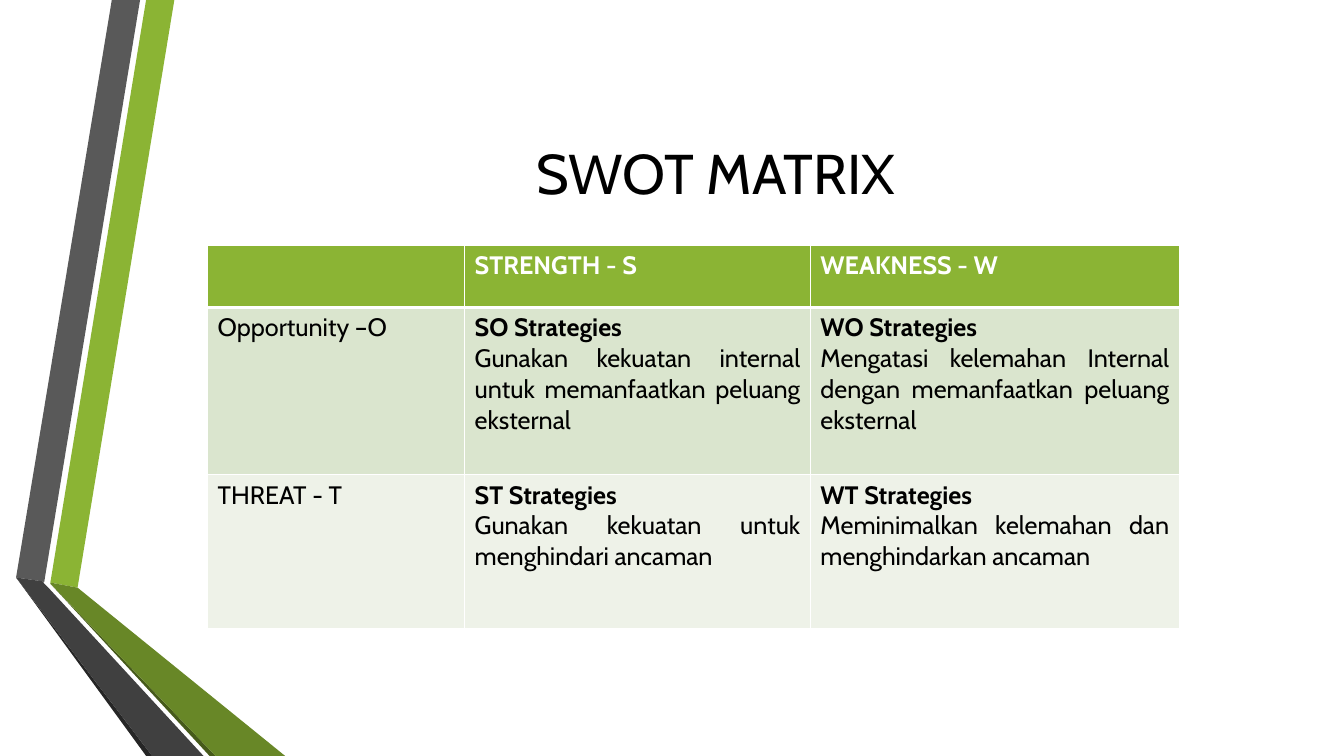
from lxml.etree import SubElement as Sub
from pptx import Presentation
from pptx.dml.color import RGBColor as RGB
from pptx.enum.text import MSO_ANCHOR as Anchor, PP_ALIGN as Align
from pptx.oxml.ns import qn
from pptx.util import Inches, Pt

HUES = {
    "white": "FFFFFF", "black": "000000", "green": "8BB434",
    "olive": "688727", "moss": "465A1A", "grey": "595959",
    "coal": "404040", "soot": "262626", "sage": "DAE5CE", "mist": "EEF2E8",
}
COLS, ROWS = 40, 22.5
BANDS = [
    ("green", [(1.5, 17.34), (2.31, 17.49), (5.19, 0), (4.35, 0)]),
    ("grey", [(4.17, 0), (3.33, 0), (0.48, 17.19), (1.32, 17.31)]),
    ("soot", [(0.48, 17.19), (4.35, ROWS), (4.53, ROWS)]),
    ("moss", [(1.5, 17.37), (6.24, ROWS), (6.42, ROWS)]),
    ("olive", [(1.5, 17.37), (6.42, ROWS), (8.49, ROWS),
               (2.31, 17.49), (1.5, 17.34)]),
    ("coal", [(6.06, ROWS), (1.44, 17.49), (1.29, 17.34),
              (1.32, 17.31), (0.48, 17.19), (4.53, ROWS)]),
]
CELLS = [
    [[], ["STRENGTH - S"], ["WEAKNESS - W"]],
    [["Opportunity –O"],
     ["SO Strategies",
      "Gunakan kekuatan internal untuk memanfaatkan peluang eksternal"],
     ["WO Strategies",
      "Mengatasi kelemahan Internal dengan memanfaatkan peluang eksternal"]],
    [["THREAT - T"],
     ["ST Strategies", "Gunakan kekuatan untuk menghindari ancaman"],
     ["WT Strategies", "Meminimalkan kelemahan dan menghindarkan ancaman"]],
]
FILLS = ["green", "sage", "mist"]
WIDTHS = [7.65, 10.29, 10.98]
HEIGHTS = [1.86, 4.98, 4.59]


class Deck:
    face = "Cabin"
    unit = Inches(1) / 3

    def __init__(self):
        self.show = Presentation()
        self.show.slide_width = self.size(COLS)
        self.show.slide_height = self.size(ROWS)
        self.slide = self.show.slides.add_slide(self.show.slide_layouts[6])

    def size(self, count):
        return round(count * self.unit)

    def paint(self, fill, hue):
        fill.solid()
        fill.fore_color.rgb = RGB.from_string(HUES[hue])

    def style(self, para, points, hue, bold, align):
        para.alignment = align
        font = para.font
        font.name, font.size, font.bold = self.face, Pt(points), bold
        font.color.rgb = RGB.from_string(HUES[hue])

    def band(self, hue, dots):
        first, *rest = [(self.size(x), self.size(y)) for x, y in dots]
        form = self.slide.shapes.build_freeform(*first)
        form.add_line_segments(rest, close=True)
        shape = form.convert_to_shape()
        shape.shadow.inherit = False
        self.paint(shape.fill, hue)
        shape.line.fill.background()

    def title(self, text, *area):
        frame = self.slide.shapes.add_textbox(*map(self.size, area)).text_frame
        frame.word_wrap = True
        frame.vertical_anchor = Anchor.MIDDLE
        frame.text = text
        self.style(frame.paragraphs[0], 40, "black", False, Align.CENTER)

    def edge(self, cell, side, points):
        line = Sub(cell._tc.get_or_add_tcPr(), qn(f"a:ln{side}"),
                   w=str(Pt(points)))
        Sub(Sub(line, qn("a:solidFill")), qn("a:srgbClr"), val=HUES["white"])

    def cell(self, cell, lines, fill, head, thick):
        for side in "LRTB":
            self.edge(cell, side, 3 if side == thick else 1)
        self.paint(cell.fill, fill)
        cell.text = "\n".join(lines)
        pair = len(lines) > 1
        for i, para in enumerate(cell.text_frame.paragraphs):
            self.style(para, 18, "white" if head else "black",
                       head or (pair and i == 0),
                       Align.JUSTIFY if pair else Align.LEFT)

    def table(self, left, top):
        area = map(self.size, (left, top, sum(WIDTHS), sum(HEIGHTS)))
        grid = self.slide.shapes.add_table(
            len(HEIGHTS), len(WIDTHS), *area).table
        for col, width in zip(grid.columns, WIDTHS):
            col.width = self.size(width)
        for r, (row, height) in enumerate(zip(grid.rows, HEIGHTS)):
            row.height = self.size(height)
            thick = {0: "B", 1: "T"}.get(r)
            for cell, lines in zip(row.cells, CELLS[r]):
                self.cell(cell, lines, FILLS[r], r == 0, thick)


def main():
    deck = Deck()
    for hue, dots in BANDS:
        deck.band(hue, dots)
    deck.title("SWOT MATRIX", 4.86, 2.25, 32.88, 5.76)
    deck.table(6.18, 7.29)
    deck.show.save("out.pptx")


if __name__ == "__main__":
    main()
